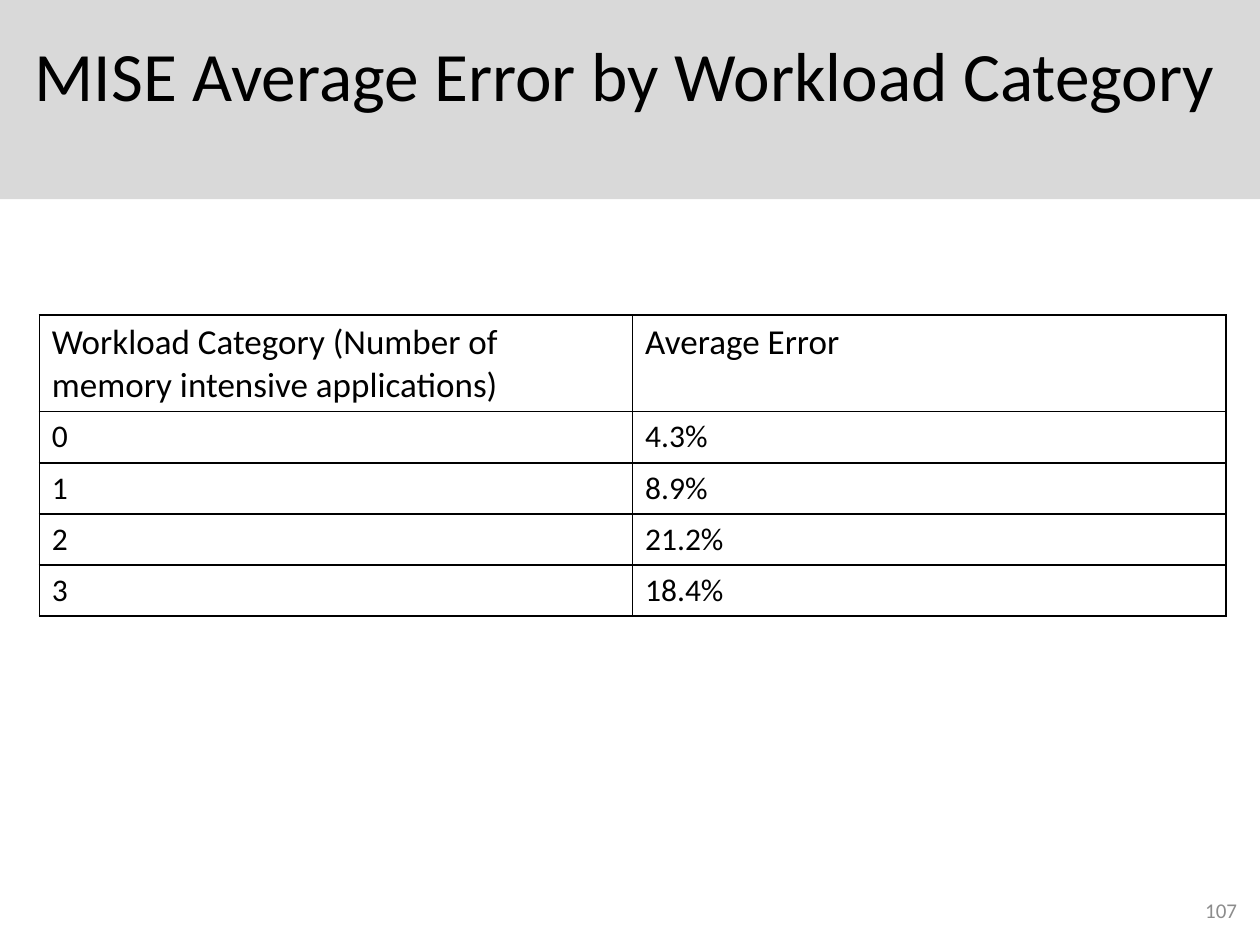
from lxml.etree import SubElement
from pptx import Presentation
from pptx.dml.color import RGBColor
from pptx.enum.shapes import MSO_SHAPE
from pptx.enum.text import MSO_ANCHOR, PP_ALIGN
from pptx.oxml.ns import qn
from pptx.util import Pt

FONT = "Calibri"
BLACK = "000000"
ROWS = [
    ("Workload Category (Number of memory intensive applications)", "Average Error"),
    ("0", "4.3%"),
    ("1", "8.9%"),
    ("2", "21.2%"),
    ("3", "18.4%"),
]


def color(hex_value):
    return RGBColor.from_string(hex_value)


def write(frame, text, size=18, ink=BLACK, align=PP_ALIGN.LEFT):
    """Put one formatted paragraph into a text frame."""
    frame.word_wrap = True
    para = frame.paragraphs[0]
    para.alignment = align
    span = para.add_run()
    span.text = text
    span.font.name = FONT
    span.font.size = Pt(size)
    span.font.color.rgb = color(ink)


def add_band(page, left, top, width, height, fill):
    band = page.shapes.add_shape(
        MSO_SHAPE.RECTANGLE, Pt(left), Pt(top), Pt(width), Pt(height))
    band.shadow.inherit = False
    band.fill.solid()
    band.fill.fore_color.rgb = color(fill)
    band.line.fill.background()


def add_text(page, left, top, width, height, text, **text_format):
    box = page.shapes.add_textbox(Pt(left), Pt(top), Pt(width), Pt(height))
    box.text_frame.vertical_anchor = MSO_ANCHOR.MIDDLE
    write(box.text_frame, text, **text_format)


def outline_cell(cell, ink, width):
    """Draw all four borders; they must precede the fill in the cell's XML."""
    properties = cell._tc.get_or_add_tcPr()
    for side in ("a:lnL", "a:lnR", "a:lnT", "a:lnB"):
        border = SubElement(properties, qn(side), w=str(Pt(width)))
        fill = SubElement(border, qn("a:solidFill"))
        SubElement(fill, qn("a:srgbClr"), val=ink)


def add_error_table(page, left, top, width, row_height):
    table = page.shapes.add_table(
        len(ROWS), len(ROWS[0]), Pt(left), Pt(top),
        Pt(width), Pt(row_height * len(ROWS))).table
    table.first_row = False
    table.horz_banding = False
    for row_index, texts in enumerate(ROWS):
        for column_index, text in enumerate(texts):
            cell = table.cell(row_index, column_index)
            outline_cell(cell, BLACK, 1)
            cell.fill.background()
            write(cell.text_frame, text, size=20 if row_index == 0 else 18)


def main():
    deck = Presentation()
    deck.slide_width, deck.slide_height = Pt(720), Pt(540)
    page = deck.slides.add_slide(deck.slide_layouts[6])
    add_band(page, 0, 0, 720, 113.75, "D9D9D9")
    add_text(page, 6, 12, 702, 60, "MISE Average Error by Workload Category",
             size=39.6, align=PP_ALIGN.CENTER)
    add_error_table(page, 22.5, 180, 678, 29.2)
    add_text(page, 546, 505.5, 168, 28.75, "107",
             size=12, ink="8C8C8C", align=PP_ALIGN.RIGHT)
    deck.save("out.pptx")


if __name__ == "__main__":
    main()
